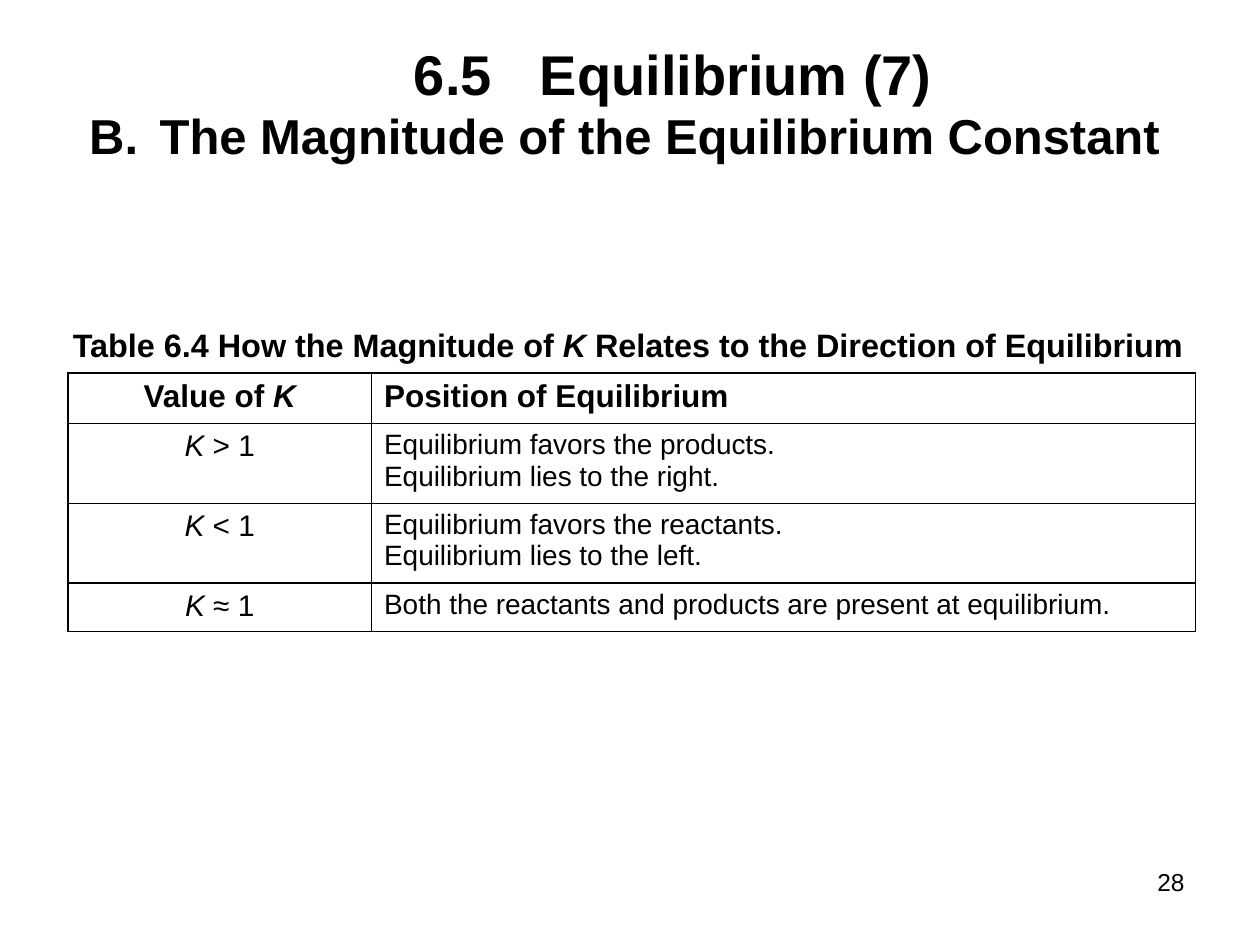
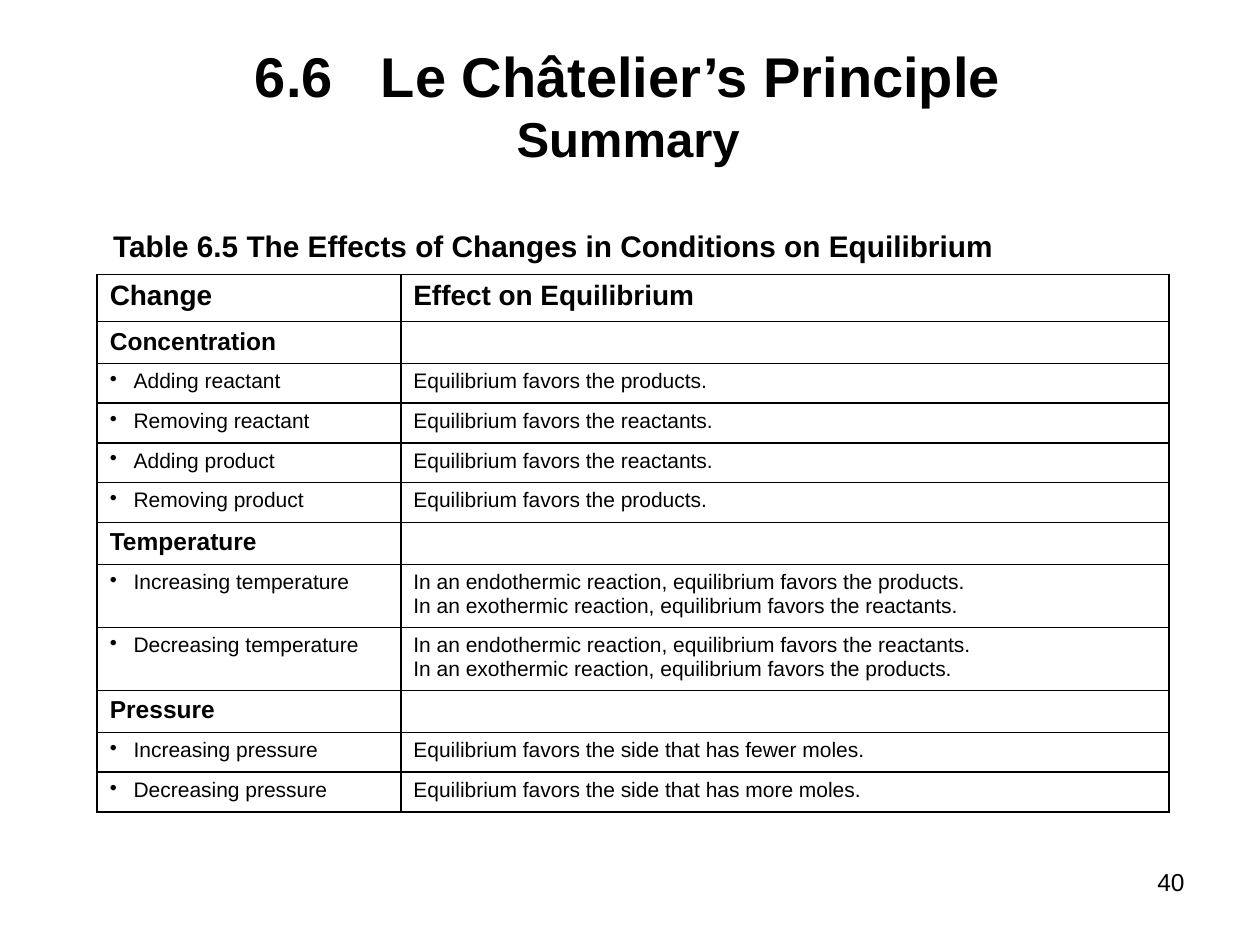
"""Build two chemistry slides with tables on chemical equilibrium."""
from lxml.etree import SubElement
from pptx import Presentation
from pptx.dml.color import RGBColor
from pptx.enum.text import MSO_ANCHOR as Anchor, MSO_AUTO_SIZE as AutoSize, PP_ALIGN as Align
from pptx.oxml.ns import qn
from pptx.util import Cm, Pt

BLACK = RGBColor(0x00, 0x00, 0x00)
WHITE = RGBColor(0xFF, 0xFF, 0xFF)
FONT = "Arial"
TITLE_SIZE, SUBTITLE_SIZE, NUMBER_SIZE = 32, 28, 14
SPACE_BEFORE = 0.1
TITLE_ONLY = 5
PRODUCTS = "Equilibrium favors the products."
REACTANTS = "Equilibrium favors the reactants."


class Deck:
    """Holds the shared style and the current slide."""

    def __init__(self):
        self.presentation = Presentation()
        self.presentation.slide_width = Cm(25.4)
        self.presentation.slide_height = Cm(19.05)
        self.slide = None

    def add_slide(self, number):
        layout = self.presentation.slide_layouts[TITLE_ONLY]
        self.slide = self.presentation.slides.add_slide(layout)
        self.slide.background.fill.solid()
        self.slide.background.fill.fore_color.rgb = WHITE
        self.text((19.53, 17.35, 4.6, 0.86), number, NUMBER_SIZE, bold=False, align=Align.RIGHT)

    def add_runs(self, paragraph, text, size, bold=False, align=Align.LEFT):
        """Add text in which asterisks enclose italics."""
        paragraph.alignment = align
        for index, part in enumerate(text.split("*")):
            if part:
                run = paragraph.add_run()
                run.text = part
                run.font.name, run.font.size = FONT, Pt(size)
                run.font.bold, run.font.italic = bold, index % 2 == 1
                run.font.color.rgb = BLACK
        if not text:
            SubElement(paragraph._p, qn("a:endParaRPr"), sz=str(size * 100))

    def bullet(self, paragraph, indent, tag, **attributes):
        properties = paragraph._p.get_or_add_pPr()
        properties.set("marL", str(Cm(indent)))
        properties.set("indent", str(-Cm(indent)))
        SubElement(properties, qn(tag), **attributes)

    def title(self, box, text, subtitle=""):
        shape = self.slide.shapes.title
        shape.left, shape.top, shape.width, shape.height = map(Cm, box)
        frame = shape.text_frame
        frame.auto_size = AutoSize.NONE
        frame.word_wrap = True
        frame.vertical_anchor = Anchor.MIDDLE
        paragraph = frame.paragraphs[0]
        self.add_runs(paragraph, text, TITLE_SIZE, True, Align.CENTER)
        if subtitle:
            self.add_runs(paragraph, subtitle, SUBTITLE_SIZE, True, Align.CENTER)

    def text(self, box, text, size, bold=True, align=Align.LEFT):
        frame = self.slide.shapes.add_textbox(*map(Cm, box)).text_frame
        frame.word_wrap = True
        paragraph = frame.paragraphs[0]
        self.add_runs(paragraph, text, size, bold, align)
        return paragraph

    def caption(self, box, text, size):
        paragraph = self.text(box, text, size)
        paragraph.space_before = Pt(round(size * SPACE_BEFORE, 1))
        return paragraph

    def table(self, left, top, widths, heights):
        frame = self.slide.shapes.add_table(
            len(heights), len(widths), Cm(left), Cm(top), Cm(sum(widths)), Cm(sum(heights)))
        table = frame.table
        table.first_row = table.horz_banding = False
        for column, width in zip(table.columns, widths):
            column.width = Cm(width)
        for row, height in zip(table.rows, heights):
            row.height = Cm(height)
        return table

    def cell(self, cell, text, size, bold=False, align=Align.LEFT, bulleted=False):
        for index, line in enumerate(text.split("\n")):
            frame = cell.text_frame
            paragraph = frame.add_paragraph() if index else frame.paragraphs[0]
            self.add_runs(paragraph, line, size, bold, align)
            if bulleted:
                self.bullet(paragraph, 0.48, "a:buChar", char="•")
        properties = cell._tc.get_or_add_tcPr()
        for side in ("lnL", "lnR", "lnT", "lnB"):
            line = SubElement(properties, qn(f"a:{side}"), w=str(Pt(1)))
            fill = SubElement(line, qn("a:solidFill"))
            SubElement(fill, qn("a:srgbClr"), val=str(BLACK))
        cell.fill.background()


def magnitude_slide(deck):
    deck.add_slide("28")
    deck.title((7.98, 0.64, 11.18, 1.65), "6.5\tEquilibrium (7)")
    heading = deck.caption((1.55, 2.01, 22.86, 1.47),
                           "The Magnitude of the Equilibrium Constant", SUBTITLE_SIZE)
    deck.bullet(heading, 1.42, "a:buAutoNum", type="alphaUcPeriod", startAt="2")
    deck.caption((1.22, 6.43, 23.19, 1.07),
                 "Table 6.4 How the Magnitude of *K* Relates to the Direction of Equilibrium", 18.5)
    rows = [
        ("Value of *K*", "Position of Equilibrium"),
        ("*K* > 1", f"{PRODUCTS}\nEquilibrium lies to the right."),
        ("*K* < 1", f"{REACTANTS}\nEquilibrium lies to the left."),
        ("*K* ≈ 1", "Both the reactants and products are present at equilibrium."),
    ]
    table = deck.table(1.37, 7.52, (6.12, 16.61), (0.95, 1.51, 1.51, 0.93))
    for index, (value, position) in enumerate(rows):
        header = index == 0
        deck.cell(table.cell(index, 0), value, 18 if header else 17, header, Align.CENTER)
        deck.cell(table.cell(index, 1), position, 18 if header else 16, header)


def summary_slide(deck):
    deck.add_slide("40")
    deck.title((4.75, 0.51, 15.82, 3.18), "6.6 \tLe Châtelier’s Principle ", "Summary")
    deck.caption((2.03, 4.47, 19.69, 0.97),
                 "Table 6.5 The Effects of Changes in Conditions on Equilibrium", 17)
    endothermic = "In an endothermic reaction, equilibrium favors the"
    exothermic = "In an exothermic reaction, equilibrium favors the"
    rows = [
        ("Change", "Effect on Equilibrium"),
        ("Concentration", ""),
        ("Adding reactant", PRODUCTS),
        ("Removing reactant", REACTANTS),
        ("Adding product", REACTANTS),
        ("Removing product", PRODUCTS),
        ("Temperature", ""),
        ("Increasing temperature", f"{endothermic} products.\n{exothermic} reactants."),
        ("Decreasing temperature", f"{endothermic} reactants.\n{exothermic} products."),
        ("Pressure", ""),
        ("Increasing pressure", "Equilibrium favors the side that has fewer moles."),
        ("Decreasing pressure", "Equilibrium favors the side that has more moles."),
    ]
    heights = [0.95] + [1.22 if "\n" in effect else 0.8 for _, effect in rows[1:]]
    table = deck.table(1.96, 5.53, (6.12, 15.49), heights)
    for index, (change, effect) in enumerate(rows):
        header, section = index == 0, not effect
        size = 16 if header else 14 if section else 12
        deck.cell(table.cell(index, 0), change, size, header or section,
                  bulleted=not (header or section))
        deck.cell(table.cell(index, 1), effect, 16 if header else 12, header)


def main():
    deck = Deck()
    magnitude_slide(deck)
    summary_slide(deck)
    deck.presentation.save("out.pptx")


if __name__ == "__main__":
    main()
